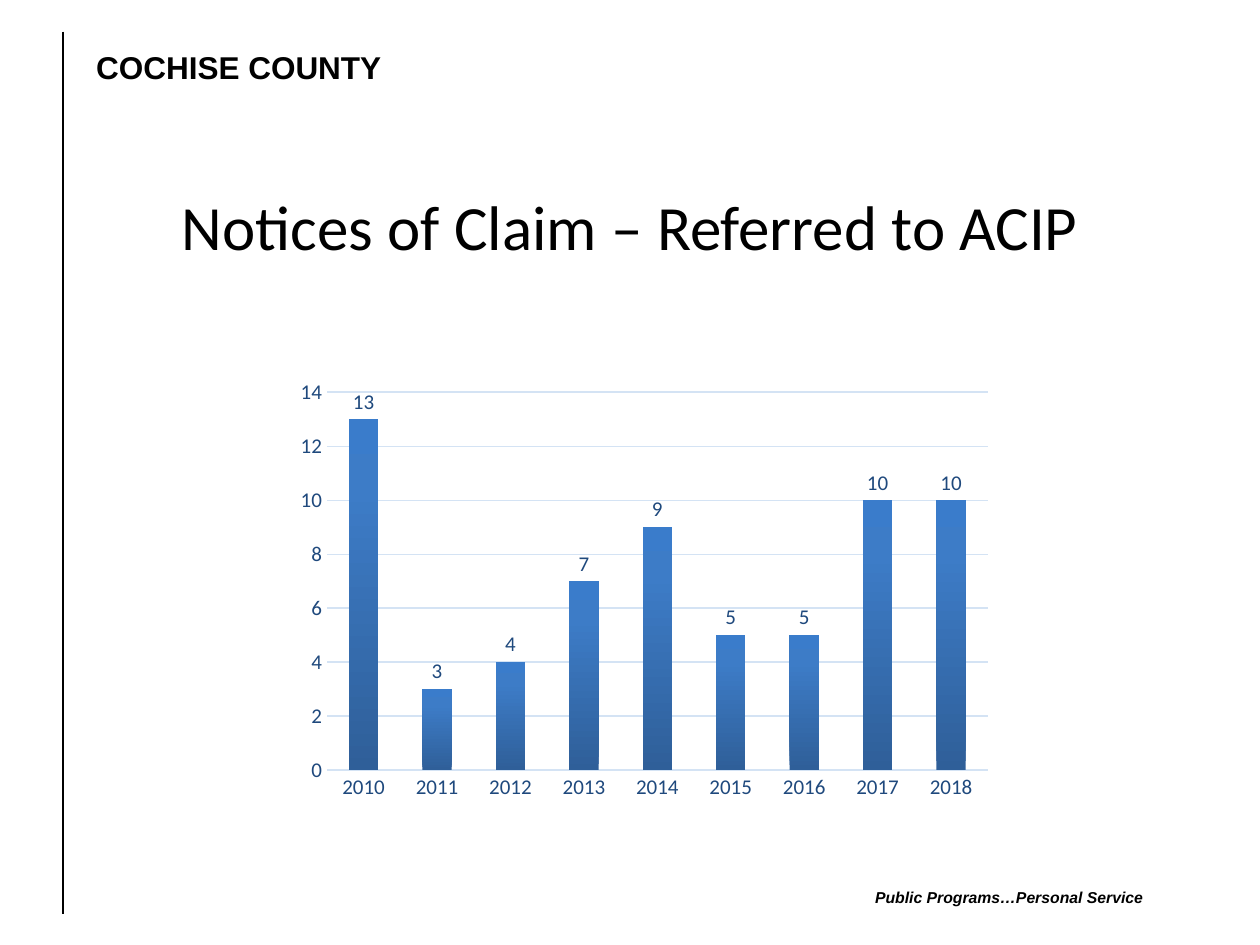
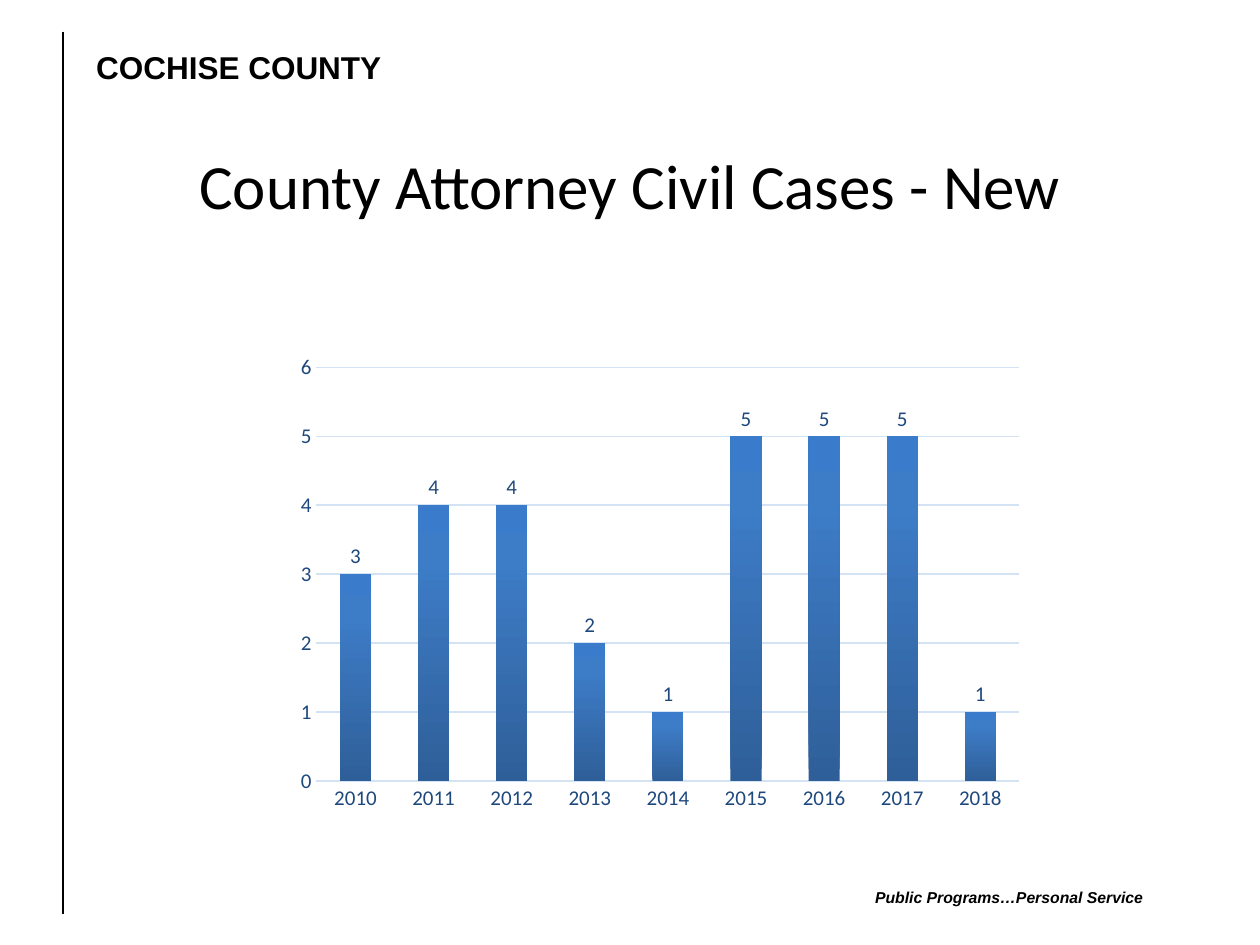
"""Build the county claim and case statistics slides."""
from dataclasses import dataclass

from lxml.etree import SubElement
from pptx import Presentation
from pptx.chart.data import CategoryChartData
from pptx.dml.color import RGBColor as Color
from pptx.enum.chart import XL_CHART_TYPE as ChartType
from pptx.enum.chart import XL_LABEL_POSITION as LabelPosition
from pptx.enum.chart import XL_TICK_MARK as TickMark
from pptx.enum.shapes import MSO_CONNECTOR as Connector
from pptx.enum.text import MSO_ANCHOR as Anchor
from pptx.enum.text import MSO_AUTO_SIZE as AutoSize
from pptx.enum.text import PP_ALIGN as Align
from pptx.oxml import parse_xml
from pptx.oxml.ns import nsdecls, qn
from pptx.util import Cm, Pt


@dataclass(frozen=True)
class Theme:
    """Colours, fonts and type sizes of the deck."""
    ink: str = "000000"
    chart_ink: str = "1F497D"
    grid: str = "D4E3F4"
    bar_stops: tuple = ((0, "2F5F99"), (80, "3D7CC7"), (100, "3A7CCB"))
    brand_font: str = "Arial"
    body_font: str = "Calibri"
    brand_size: int = 18
    footer_size: int = 9
    title_size: int = 36
    chart_size: int = 12
    line_width: float = 0.75


THEME = Theme()
YEARS = [str(year) for year in range(2010, 2019)]


def style_font(font, name, size, color, bold=False, italic=False):
    """Set the look of a font."""
    font.name, font.size = name, Pt(size)
    font.bold, font.italic = bold, italic
    font.color.rgb = Color.from_string(color)


def style_line(line, color):
    """Give a line its colour and the common width."""
    line.color.rgb = Color.from_string(color)
    line.width = Pt(THEME.line_width)


def add_text(slide, text, box, font, size, align=Align.LEFT, anchor=Anchor.TOP,
             auto_size=AutoSize.SHAPE_TO_FIT_TEXT, **emphasis):
    """Add a one-paragraph text box; box is left, top, width, height in cm."""
    frame = slide.shapes.add_textbox(*map(Cm, box)).text_frame
    frame.word_wrap = True
    frame.auto_size = auto_size
    frame.vertical_anchor = anchor
    paragraph = frame.paragraphs[0]
    paragraph.text = text
    paragraph.alignment = align
    style_font(paragraph.font, font, size, THEME.ink, **emphasis)


def add_rule(slide, x, top, bottom):
    """Add a vertical line without a shadow."""
    rule = slide.shapes.add_connector(Connector.STRAIGHT, Cm(x), Cm(top), Cm(x), Cm(bottom))
    style_line(rule.line, THEME.ink)
    SubElement(rule._element.spPr, qn("a:effectLst"))


def add_frame(slide):
    """Add the county name, side rule and motto found on every slide."""
    add_text(slide, "COCHISE COUNTY", (1.69, 0.85, 13.55, 1.02),
             THEME.brand_font, THEME.brand_size, bold=True)
    add_rule(slide, 1.27, 0.64, 18.42)
    add_text(slide, "Public Programs…Personal Service", (15.03, 17.78, 8.26, 0.64),
             THEME.brand_font, THEME.footer_size, Align.RIGHT, bold=True, italic=True)


def add_title(slide, text, top):
    """Add the centred slide title."""
    add_text(slide, text, (1.27, top, 22.86, 3.18), THEME.body_font, THEME.title_size,
             Align.CENTER, Anchor.MIDDLE, AutoSize.NONE)


def fill_gradient(series):
    """Fill the bars with the theme gradient, dark at the foot."""
    stops = "".join(f'<a:gs pos="{position * 1000}"><a:srgbClr val="{color}"/></a:gs>'
                    for position, color in THEME.bar_stops)
    properties = series._element.get_or_add_spPr()
    properties.insert(0, parse_xml(
        f'<a:gradFill {nsdecls("a")} rotWithShape="1"><a:gsLst>{stops}</a:gsLst>'
        '<a:lin ang="16200000" scaled="0"/></a:gradFill>'))


def place_plot(chart, left, top, width, height):
    """Fix the inner plot area as fractions of the chart."""
    plot_area = chart._chartSpace.chart.plotArea
    for layout in plot_area.findall(qn("c:layout")):
        plot_area.remove(layout)
    sizes = "".join(f'<c:{tag} val="{value}"/>' for tag, value in
                    (("x", left), ("y", top), ("w", width), ("h", height)))
    plot_area.insert(0, parse_xml(
        f'<c:layout {nsdecls("c")}><c:manualLayout><c:layoutTarget val="inner"/>'
        f'<c:xMode val="edge"/><c:yMode val="edge"/>{sizes}</c:manualLayout></c:layout>'))


def style_axes(chart, maximum, step):
    """Style both axes and set the value scale."""
    for axis in (chart.category_axis, chart.value_axis):
        axis.major_tick_mark = axis.minor_tick_mark = TickMark.NONE
        style_font(axis.tick_labels.font, THEME.body_font, THEME.chart_size, THEME.chart_ink)
    style_line(chart.category_axis.format.line, THEME.grid)
    values = chart.value_axis
    values.minimum_scale, values.maximum_scale, values.major_unit = 0, maximum, step
    values.format.line.fill.background()
    values.has_major_gridlines = True
    style_line(values.major_gridlines.format.line, THEME.grid)


def add_yearly_chart(slide, counts, box, plot_width, maximum, step):
    """Add a column chart with one labelled bar per year."""
    data = CategoryChartData()
    data.categories = YEARS
    data.add_series("Series 1", counts)
    chart = slide.shapes.add_chart(ChartType.COLUMN_CLUSTERED, *map(Cm, box), data).chart
    style_font(chart.font, THEME.body_font, THEME.chart_size, THEME.chart_ink)
    chart.has_legend = chart.has_title = False
    style_axes(chart, maximum, step)
    plot = chart.plots[0]
    plot.gap_width = 150
    plot.vary_by_categories = False
    plot.has_data_labels = True
    labels = plot.data_labels
    labels.show_value = True
    labels.position = LabelPosition.OUTSIDE_END
    style_font(labels.font, THEME.body_font, THEME.chart_size, THEME.chart_ink)
    fill_gradient(plot.series[0])
    place_plot(chart, 0.114, 0.129, plot_width, 0.73)


def add_statistics_slide(presentation, title, title_top, **chart):
    """Add a framed slide with a title and a yearly chart."""
    slide = presentation.slides.add_slide(presentation.slide_layouts[6])
    add_frame(slide)
    add_title(slide, title, title_top)
    add_yearly_chart(slide, **chart)


def main():
    """Build and save the presentation."""
    presentation = Presentation()
    presentation.slide_width, presentation.slide_height = Cm(25.4), Cm(19.05)
    add_statistics_slide(presentation, "Notices of Claim – Referred to ACIP", 2.96,
                         counts=(13, 3, 4, 7, 9, 5, 5, 10, 10),
                         box=(4.66, 6.56, 16.93, 10.44),
                         plot_width=0.787, maximum=14, step=2)
    add_statistics_slide(presentation, "County Attorney Civil Cases - New", 2.12,
                         counts=(3, 4, 4, 2, 1, 5, 5, 5, 1),
                         box=(4.45, 5.93, 16.93, 11.43),
                         plot_width=0.837, maximum=6, step=1)
    presentation.save("out.pptx")


if __name__ == "__main__":
    main()
